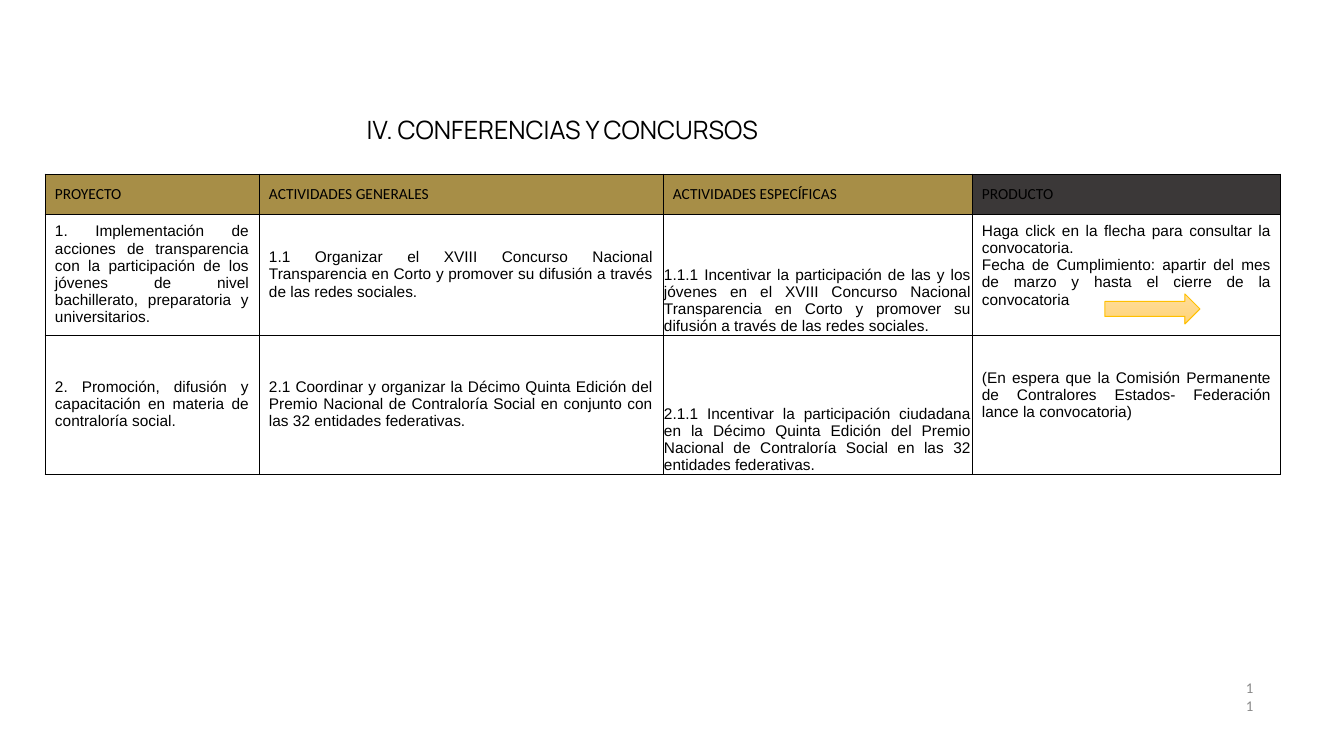
import pptx
import pptx.dml.color
import pptx.enum.shapes
import pptx.enum.text
import pptx.oxml
import pptx.oxml.ns
import pptx.util

RGBColor = pptx.dml.color.RGBColor
BLACK = RGBColor(0x00, 0x00, 0x00)
GRAY = RGBColor(0x89, 0x89, 0x89)
GOLD = RGBColor(0xA7, 0x8E, 0x47)
DARK = RGBColor(0x3B, 0x38, 0x38)
AMBER = RGBColor(0xFF, 0xC0, 0x00)
CREAM = RGBColor(0xFF, 0xDC, 0x9B)
HONEY = RGBColor(0xFF, 0xD4, 0x78)

ALIGN = pptx.enum.text.PP_ALIGN
ANCHOR = pptx.enum.text.MSO_ANCHOR
SCALE = 914400 / 100.8

HEADS = ["PROYECTO", "ACTIVIDADES GENERALES", "ACTIVIDADES ESPECÍFICAS", "PRODUCTO"]
ROWS = [
    [
        "1. Implementación de acciones de transparencia con la participación de los "
        "jóvenes de nivel bachillerato, preparatoria y universitarios.",
        "1.1 Organizar el XVIII Concurso Nacional Transparencia en Corto y promover "
        "su difusión a través de las redes sociales.",
        "1.1.1 Incentivar la participación de las y los jóvenes en el XVIII Concurso "
        "Nacional Transparencia en Corto y promover su difusión a través de las "
        "redes sociales.",
        "Haga click en la flecha para consultar la convocatoria.\n"
        "Fecha de Cumplimiento: apartir del mes de marzo y hasta el cierre de la "
        "convocatoria",
    ],
    [
        "2. Promoción, difusión y capacitación en materia de contraloría social.",
        "2.1 Coordinar y organizar la Décimo Quinta Edición del Premio Nacional de "
        "Contraloría Social en conjunto con las 32 entidades federativas.",
        "2.1.1 Incentivar la participación ciudadana en la Décimo Quinta Edición del "
        "Premio Nacional de Contraloría Social en las 32 entidades federativas.",
        "(En espera que la Comisión Permanente de Contralores Estados- Federación "
        "lance la convocatoria)",
    ],
]
# Cell margins: left, top, right, bottom
PLAIN = (10, 5, 10, 5)
TIGHT = (1, 1, 1, 0)
RAISED = (10, 5, 10, 23)  # lifts the product text clear of the arrow
INSETS = [PLAIN, PLAIN, TIGHT, RAISED]


def px(count):
    return pptx.util.Emu(round(count * SCALE))


class Sheet:
    def __init__(self, deck):
        self.shapes = deck.slides.add_slide(deck.slide_layouts[6]).shapes

    def style(self, frame, font, size, color, align):
        for para in frame.paragraphs:
            para.alignment = align
            para.font.name = font
            para.font.size = pptx.util.Pt(size)
            para.font.color.rgb = color

    def inset(self, item, left, top, right, base):
        item.margin_left, item.margin_top = px(left), px(top)
        item.margin_right, item.margin_bottom = px(right), px(base)

    def text(self, box, words, font, size, color, align, anchor, left=0):
        frame = self.shapes.add_textbox(*map(px, box)).text_frame
        frame.word_wrap = True
        frame.vertical_anchor = anchor
        self.inset(frame, left, 0, 0, 0)
        frame.text = words
        self.style(frame, font, size, color, align)

    def border(self, cell):
        """Draw a thin black line on all four sides; call before any fill."""
        props = cell._tc.get_or_add_tcPr()
        for side in "LRTB":
            props.append(pptx.oxml.parse_xml(
                f'<a:ln{side} {pptx.oxml.ns.nsdecls("a")} w="9525"><a:solidFill>'
                f'<a:srgbClr val="{BLACK}"/></a:solidFill></a:ln{side}>'))

    def cell(self, cell, words, font, fill, inset):
        self.border(cell)
        if fill is None:
            cell.fill.background()
        else:
            cell.fill.solid()
            cell.fill.fore_color.rgb = fill
        cell.vertical_anchor = ANCHOR.BOTTOM if inset == TIGHT else ANCHOR.MIDDLE
        self.inset(cell, *inset)
        cell.text = words
        self.style(cell.text_frame, font, 11, BLACK, ALIGN.JUSTIFY)

    def table(self, left, top, wides, highs):
        box = map(px, (left, top, sum(wides), sum(highs)))
        table = self.shapes.add_table(len(highs), len(wides), *box).table
        table.first_row = table.horz_banding = False
        for col, wide in zip(table.columns, wides):
            col.width = px(wide)
        for row, high in zip(table.rows, highs):
            row.height = px(high)
        for j, head in enumerate(HEADS):
            fill = DARK if j == len(HEADS) - 1 else GOLD
            self.cell(table.cell(0, j), head, "Calibri", fill, PLAIN)
        for i, row in enumerate(ROWS, 1):
            for j, words in enumerate(row):
                self.cell(table.cell(i, j), words, "Arial", None, INSETS[j])

    def arrow(self, box):
        kind = pptx.enum.shapes.MSO_SHAPE.RIGHT_ARROW
        arrow = self.shapes.add_shape(kind, *map(px, box))
        arrow.shadow.inherit = False
        arrow.fill.gradient()
        arrow.fill.gradient_angle = 270
        for stop, color in zip(arrow.fill.gradient_stops, (CREAM, HONEY)):
            stop.color.rgb = color
        arrow.line.color.rgb = AMBER
        arrow.line.width = pptx.util.Pt(0.75)


def main():
    deck = pptx.Presentation()
    deck.slide_width, deck.slide_height = px(1344), px(756)
    sheet = Sheet(deck)
    sheet.text((143, 113, 839, 32), "IV. CONFERENCIAS Y CONCURSOS",
               "Manrope", 18, BLACK, ALIGN.CENTER, ANCHOR.MIDDLE)
    sheet.text((1242, 679, 15, 73), "11",
               "Calibri", 10.6, GRAY, ALIGN.LEFT, ANCHOR.TOP, left=4)
    sheet.table(45, 174, [214, 404, 309, 309], [40, 121, 139])
    sheet.arrow((1105, 294, 95, 30))
    deck.save("out.pptx")


if __name__ == "__main__":
    main()
